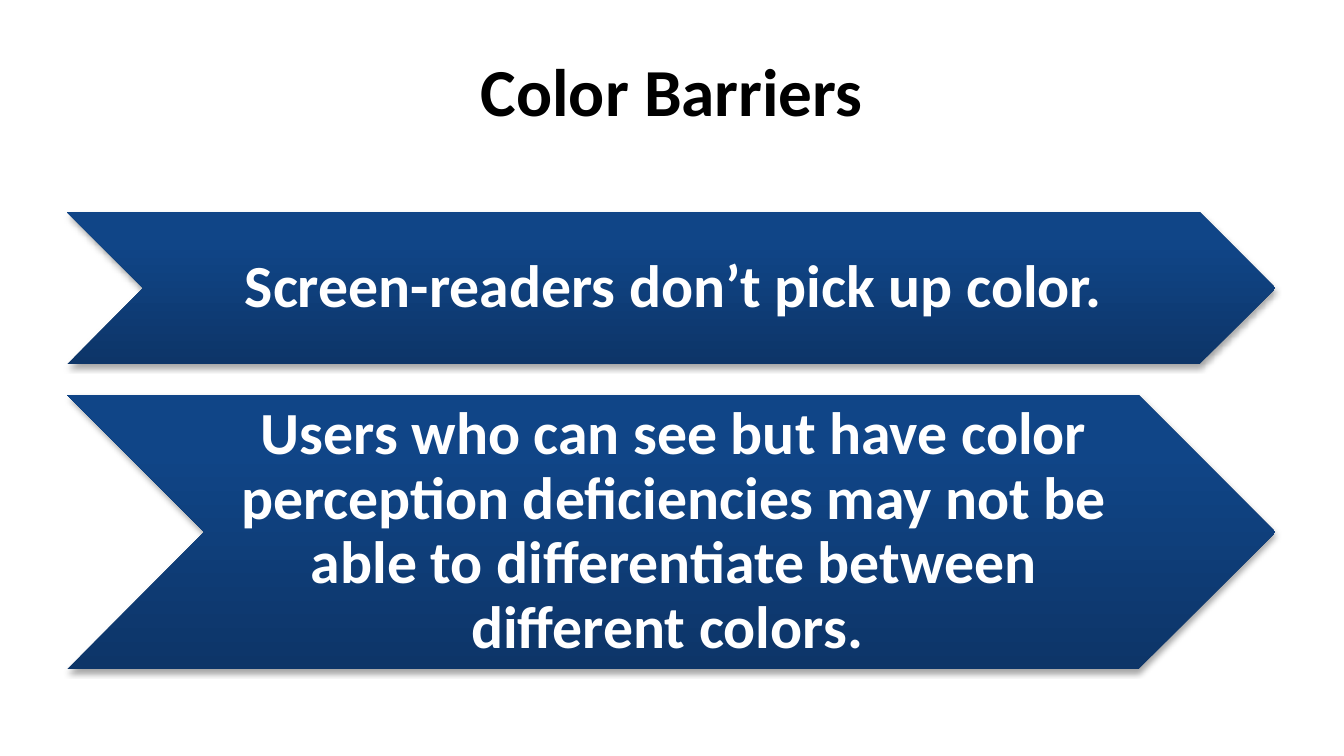
"""Build the Color Barriers slide with two chevron statements."""
import pptx
import pptx.util
import pptx.dml.color
import pptx.enum.shapes
import pptx.enum.text
import pptx.oxml
import pptx.oxml.ns
import copy

Inches = pptx.util.Inches
Pt = pptx.util.Pt
COLORS = {"title": "000000", "statement": "FFFFFF", "shadow": "000000",
          "deep": "0D3568", "blue": "104587", "top": "0E458A"}
GRADIENT = [(0, "deep"), (0.8, "blue"), (1, "top")]
SHADOW = (
    f'<a:outerShdw {pptx.oxml.ns.nsdecls("a")} blurRad="{Pt(3.15)}" dist="{Pt(1.8)}" '
    f'dir="5400000" rotWithShape="0"><a:srgbClr val="{COLORS["shadow"]}">'
    '<a:alpha val="35000"/></a:srgbClr></a:outerShdw>'
)

deck = pptx.Presentation()
deck.slide_width = Inches(10)
deck.slide_height = Inches(10 * 9 / 16)
slide = deck.slides.add_slide(deck.slide_layouts[6])


def add_text(text, left, top, width, height, size, color, insets, spacing=1.0):
    box = slide.shapes.add_textbox(Inches(left), Inches(top), Inches(width), Inches(height))
    frame = box.text_frame
    frame.word_wrap = True
    frame.vertical_anchor = pptx.enum.text.MSO_ANCHOR.MIDDLE
    frame.margin_left, frame.margin_top, frame.margin_right, frame.margin_bottom = map(Inches, insets)
    paragraph = frame.paragraphs[0]
    paragraph.alignment = pptx.enum.text.PP_ALIGN.CENTER
    paragraph.line_spacing = spacing
    run = paragraph.add_run()
    run.text = text
    run.font.name = "Calibri"
    run.font.size = Pt(size)
    run.font.bold = True
    run.font.color.rgb = pptx.dml.color.RGBColor.from_string(COLORS[color])


add_text("Color Barriers", 0.5, 0.23, 9, 0.94, size=36, color="title",
         insets=(0.1, 0.05, 0.1, 0.11))

left, width, gap = 0.5, 8.99, 0.23
top = 1.58
statements = [
    ("Screen-readers don’t pick up color.", 1.13),
    ("Users who can see but have color perception deficiencies may not be able to "
     "differentiate between different colors. ", 2.04),
]
for statement, height in statements:
    chevron = slide.shapes.add_shape(
        pptx.enum.shapes.MSO_SHAPE.CHEVRON,
        Inches(left), Inches(top), Inches(width), Inches(height))
    chevron.line.fill.background()
    chevron.fill.gradient()
    chevron.fill.gradient_angle = 90
    properties = chevron._element.spPr
    stop_list = properties.find(".//" + pptx.oxml.ns.qn("a:gsLst"))
    stop_list.append(copy.deepcopy(stop_list[-1]))
    for stop, (position, color) in zip(chevron.fill.gradient_stops, GRADIENT):
        stop.position = position
        stop.color.rgb = pptx.dml.color.RGBColor.from_string(COLORS[color])
    chevron.shadow.inherit = False
    properties.find(pptx.oxml.ns.qn("a:effectLst")).append(pptx.oxml.parse_xml(SHADOW))
    add_text(statement, left + height / 2, top, width - height, height, size=32,
             color="statement", insets=(0.04, 0.02, 0, 0.02), spacing=0.9)
    top += height + gap

deck.save("out.pptx")
